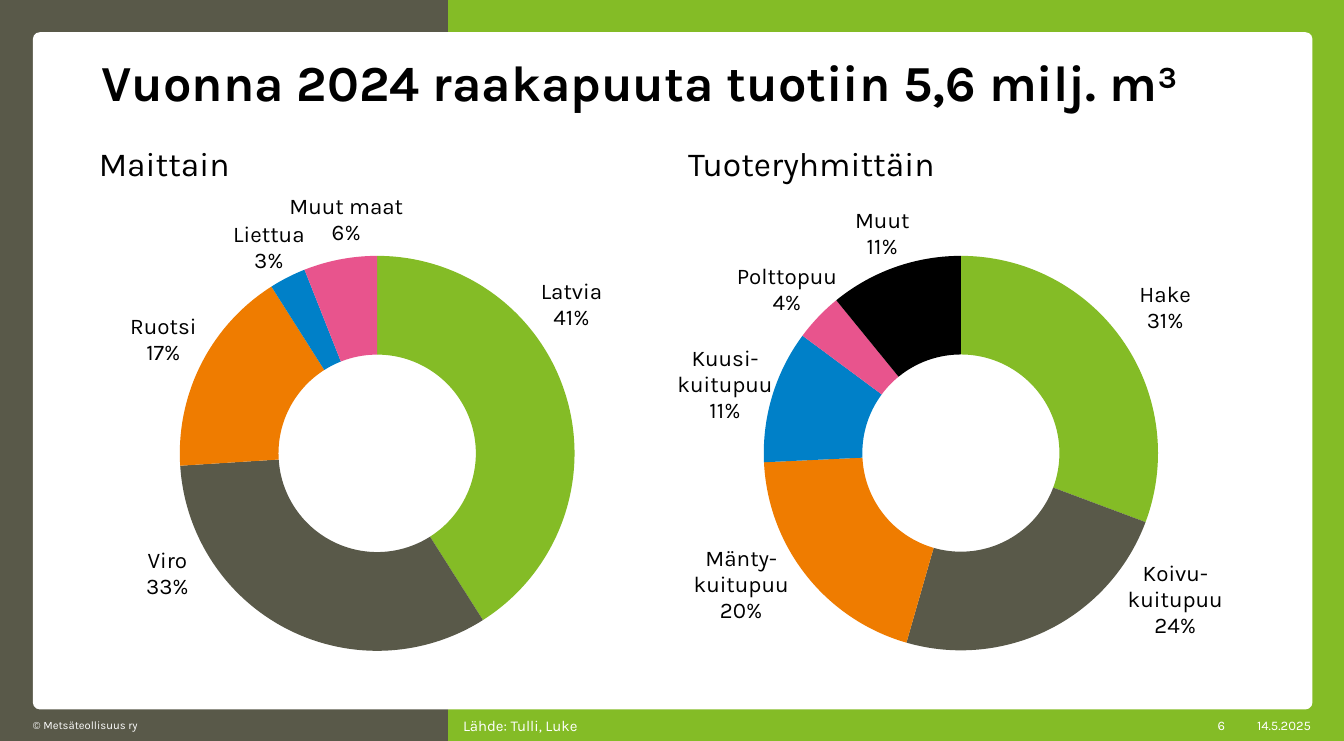
from copy import deepcopy
from dataclasses import dataclass
from math import cos, pi, sin

from lxml import etree
from pptx import Presentation
from pptx.chart.data import CategoryChartData
from pptx.dml.color import RGBColor
from pptx.enum.chart import XL_CHART_TYPE as ChartType
from pptx.enum.shapes import MSO_SHAPE as Preset
from pptx.enum.text import MSO_ANCHOR as Anchor, MSO_AUTO_SIZE as AutoSize, PP_ALIGN as Align
from pptx.oxml.ns import qn
from pptx.util import Inches, Pt

FONT = "Karla"
GREY, GREEN, WHITE, BLACK = "595949", "84BC26", "FFFFFF", "000000"
SLICE_COLORS = [GREEN, GREY, "EF7C00", "0080C8", "E8548D", BLACK]
COMPARISON_LAYOUT = 4
RING_CENTER_Y = 6.74
RING_MIDDLE = 2.2  # radius halfway between the hole and the rim


@dataclass
class Box:
    left: float
    top: float
    width: float
    height: float

    def emu(self) -> list:
        return [Inches(n) for n in (self.left, self.top, self.width, self.height)]


@dataclass
class Panel:
    box: Box
    color: str
    preset: Preset = Preset.RECTANGLE


@dataclass
class Note:
    text: str
    box: Box
    size: float
    align: Align = Align.LEFT


@dataclass
class Slice:
    name: str
    share: float
    label_x: float  # centre of the label on the slide
    label_y: float


@dataclass
class Ring:
    heading: str
    heading_idx: int
    heading_box: Box
    box: Box
    plot: tuple  # x, y, w, h as fractions of the chart
    center_x: float
    slices: list


PANELS = [
    Panel(Box(0, 0, 6.67, 11.02), GREY),
    Panel(Box(6.67, 0, 13.33, 11.02), GREEN),
    Panel(Box(0.49, 0.48, 19.04, 10.07), WHITE, Preset.ROUNDED_RECTANGLE),
]
NOTES = [
    Note("© Metsäteollisuus ry", Box(0.49, 10.62, 6.18, 0.34), 12),
    Note("6", Box(17.69, 10.55, 0.54, 0.48), 14, Align.RIGHT),
    Note("14.5.2025", Box(18.42, 10.55, 1.09, 0.48), 14, Align.RIGHT),
    Note("Lähde: Tulli, Luke", Box(6.89, 10.55, 6.22, 0.48), 16),
]
RINGS = [
    Ring("Maittain", 1, Box(1.27, 2.26, 8.69, 0.68), Box(1.27, 2.67, 8.73, 7.01),
         (0.161, 0.162, 0.673, 0.838), 5.61, [
             Slice("Latvia", 0.41, 8.5, 4.54),
             Slice("Viro", 0.33, 2.49, 8.54),
             Slice("Ruotsi", 0.17, 2.43, 5.06),
             Slice("Liettua", 0.03, 4, 3.69),
             Slice("Muut maat", 0.06, 5.15, 3.27)]),
    Ring("Tuoteryhmittäin", 3, Box(10.04, 2.26, 8.55, 0.68), Box(10, 2.67, 8.59, 7.01),
         (0.159, 0.162, 0.683, 0.837), 14.3, [
             Slice("Hake", 0.31, 17.34, 4.58),
             Slice("Koivu-kuitupuu", 0.24, 17.49, 8.93),
             Slice("Mänty-kuitupuu", 0.2, 11.03, 8.71),
             Slice("Kuusi-kuitupuu", 0.11, 10.79, 5.73),
             Slice("Polttopuu", 0.04, 11.71, 4.32),
             Slice("Muut", 0.11, 13.13, 3.48)]),
]


def rgb(color: str) -> RGBColor:
    return RGBColor.from_string(color)


def style_font(font, size: float, color: str, bold: bool = False) -> None:
    font.name, font.size, font.bold = FONT, Pt(size), bold
    font.color.rgb = rgb(color)


def write(shape, text: str, size: float, color: str, anchor: Anchor, inset: tuple,
          align: Align = Align.LEFT, bold: bool = False, spacing: float = 0.9) -> None:
    frame = shape.text_frame
    frame.word_wrap, frame.auto_size = True, AutoSize.NONE
    frame.vertical_anchor = anchor
    frame.margin_left = frame.margin_right = Inches(inset[0])
    frame.margin_top = frame.margin_bottom = Inches(inset[1])
    line = frame.paragraphs[0]
    line.text, line.alignment, line.line_spacing = text, align, spacing
    line.space_before = Pt(0)
    style_font(line.font, size, color, bold)


def place(shape, box: Box) -> None:
    shape.left, shape.top, shape.width, shape.height = box.emu()


def add_panel(slide, panel: Panel, depth: int) -> None:
    """Draw a background panel behind the placeholders."""
    shape = slide.shapes.add_shape(panel.preset, *panel.box.emu())
    shape.shadow.inherit = False
    shape.fill.solid()
    shape.fill.fore_color.rgb = rgb(panel.color)
    shape.line.fill.background()
    if panel.preset == Preset.ROUNDED_RECTANGLE:
        shape.adjustments[0] = 0.01
    slide.shapes._spTree.insert(2 + depth, shape._element)


def manual_layout(**values) -> etree._Element:
    layout = etree.Element(qn("c:layout"))
    manual = etree.SubElement(layout, qn("c:manualLayout"))
    for tag, value in values.items():
        number = value if isinstance(value, str) else f"{value:.4f}"
        etree.SubElement(manual, qn(f"c:{tag}")).set("val", number)
    return layout


def label_slices(ring: Ring, series) -> None:
    """Show name and share, with each label moved from its slice to its own place."""
    labels = series.data_labels
    labels.show_category_name = labels.show_value = True
    labels.number_format, labels.number_format_is_linked = "0%", False
    style_font(labels.font, 24, BLACK)
    shared = labels._element
    shared.find(f".//{qn('a:bodyPr')}").set("wrap", "square")
    leader = shared.find(qn("c:showLeaderLines"))
    if leader is None:
        leader = etree.SubElement(shared, qn("c:showLeaderLines"))
    leader.set("val", "0")
    separator = etree.Element(qn("c:separator"))
    separator.text = "\n"
    leader.addprevious(separator)

    settings = [child for child in shared if child is not leader]
    total, passed = sum(s.share for s in ring.slices), 0
    for i, part in enumerate(ring.slices):
        angle = 2 * pi * (passed + part.share / 2) / total
        passed += part.share
        dx = part.label_x - ring.center_x - RING_MIDDLE * sin(angle)
        dy = part.label_y - RING_CENTER_Y + RING_MIDDLE * cos(angle)
        label = etree.Element(qn("c:dLbl"))
        etree.SubElement(label, qn("c:idx")).set("val", str(i))
        label.append(manual_layout(x=dx / ring.box.width, y=dy / ring.box.height))
        label.extend(deepcopy(settings))
        shared.insert(i, label)


def add_ring(slide, ring: Ring) -> None:
    data = CategoryChartData(number_format="0%")
    data.categories = [s.name for s in ring.slices]
    data.add_series("Series 1", [s.share for s in ring.slices])
    chart = slide.shapes.add_chart(ChartType.DOUGHNUT, *ring.box.emu(), data).chart
    chart.has_title = chart.has_legend = False
    style_font(chart.font, 10, GREY)
    plot = chart.plots[0]
    plot.vary_by_categories = True
    plot._element.find(qn("c:holeSize")).set("val", "55")

    area = chart._chartSpace.find(f".//{qn('c:plotArea')}")
    for old in area.findall(qn("c:layout")):
        area.remove(old)
    x, y, w, h = ring.plot
    area.insert(0, manual_layout(layoutTarget="inner", xMode="edge", yMode="edge",
                                 x=x, y=y, w=w, h=h))
    series = plot.series[0]
    for i, color in zip(range(len(ring.slices)), SLICE_COLORS):
        look = series.points[i].format
        look.fill.solid()
        look.fill.fore_color.rgb = rgb(color)
        look.line.fill.background()
    label_slices(ring, series)


def main() -> None:
    deck = Presentation()
    deck.slide_width, deck.slide_height = Inches(20), Inches(11.02)
    slide = deck.slides.add_slide(deck.slide_layouts[COMPARISON_LAYOUT])
    for depth, panel in enumerate(PANELS):
        add_panel(slide, panel, depth)

    title = slide.shapes.title
    place(title, Box(1.41, 0.81, 17.18, 1.45))
    write(title, "Vuonna 2024 raakapuuta tuotiin 5,6 milj. m³", 54, BLACK,
          Anchor.TOP, (0.1, 0.05), bold=True)
    for ring in RINGS:
        heading = slide.placeholders[ring.heading_idx]
        place(heading, ring.heading_box)
        write(heading, ring.heading, 36, BLACK, Anchor.BOTTOM, (0.2, 0.2))
        add_ring(slide, ring)
    for note in NOTES:
        write(slide.shapes.add_textbox(*note.box.emu()), note.text, note.size, WHITE,
              Anchor.MIDDLE, (0, 0), note.align, spacing=1)
    for unused in (2, 4):
        body = slide.placeholders[unused]._element
        body.getparent().remove(body)
    deck.save("out.pptx")


if __name__ == "__main__":
    main()
